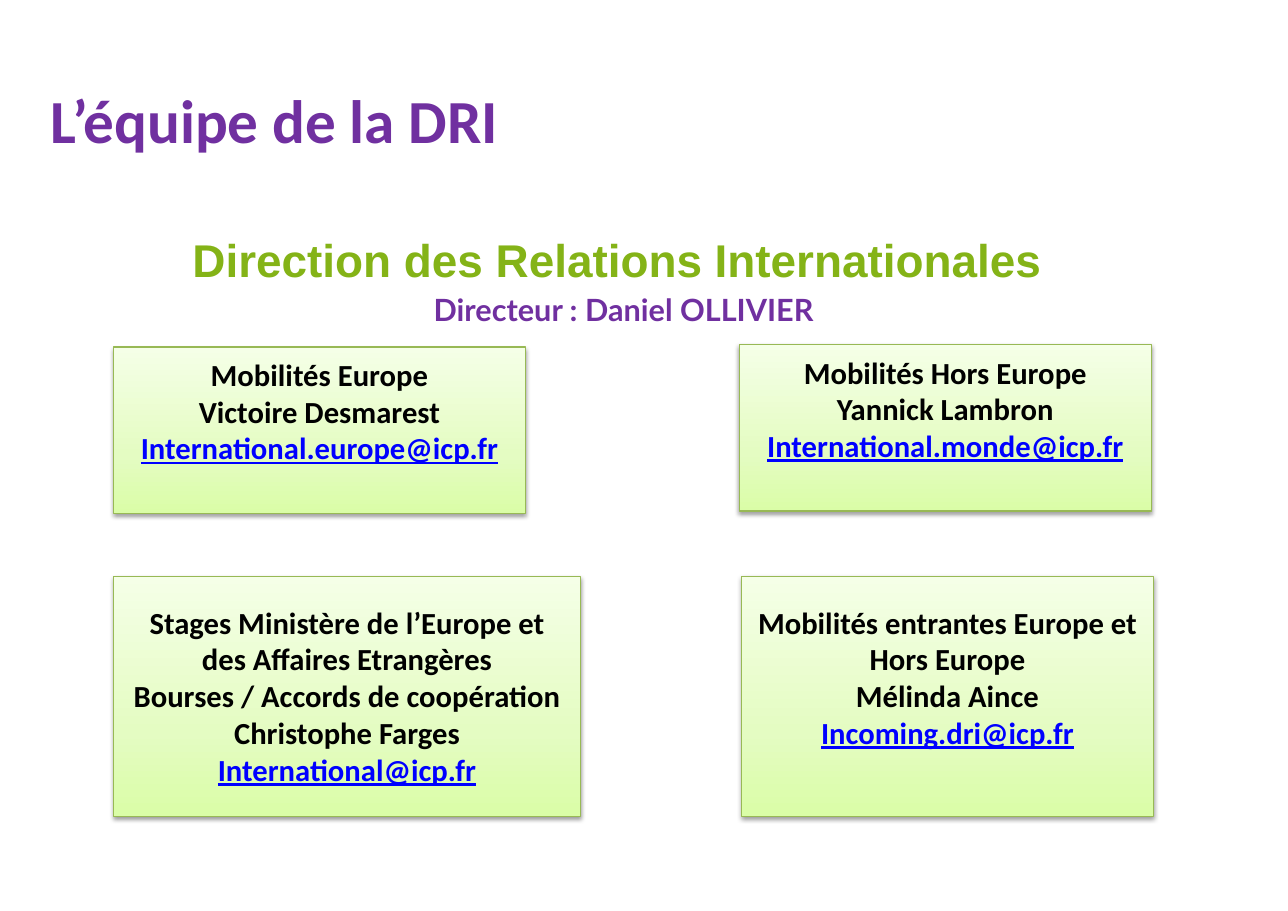
from dataclasses import dataclass

from lxml import etree
from pptx import Presentation
from pptx.dml.color import RGBColor
from pptx.enum.shapes import MSO_SHAPE
from pptx.enum.text import MSO_ANCHOR, MSO_AUTO_SIZE, PP_ALIGN
from pptx.oxml.ns import qn
from pptx.util import Inches, Pt

RECT = MSO_SHAPE.RECTANGLE
TOP, MIDDLE = MSO_ANCHOR.TOP, MSO_ANCHOR.MIDDLE
NO_FIT = MSO_AUTO_SIZE.NONE
LEFT, CENTER = PP_ALIGN.LEFT, PP_ALIGN.CENTER


@dataclass(frozen=True)
class Theme:
    purple: str = "7030A0"
    green: str = "84B317"
    black: str = "000000"
    link: str = "0000FF"
    border: str = "98B955"
    gradient: tuple = ((0, "DAFDA7"), (35, "E4FCC2"), (100, "F5FFE7"))
    font: str = "Calibri"
    heading_font: str = "Arial"
    director_font: str = "Lato"
    title_size: int = 40
    heading_size: int = 30
    text_size: int = 20


@dataclass(frozen=True)
class TeamBox:
    left: float
    top: float
    width: float
    height: float
    inset: float
    lines: tuple
    email: str


THEME = Theme()
TEAM = (
    TeamBox(1.03, 3.15, 3.74, 1.51, 0.08,
            ("Mobilités Europe", "Victoire Desmarest"),
            "International.europe@icp.fr"),
    TeamBox(6.71, 3.13, 3.74, 1.51, 0.08,
            ("Mobilités Hors Europe", "Yannick Lambron"),
            "International.monde@icp.fr"),
    TeamBox(1.03, 5.23, 4.24, 2.18, 0.25,
            ("Stages Ministère de l’Europe et des Affaires Etrangères",
             "Bourses / Accords de coopération", "Christophe Farges"),
            "International@icp.fr"),
    TeamBox(6.73, 5.23, 3.74, 2.18, 0.25,
            ("Mobilités entrantes Europe et Hors Europe", "Mélinda Aince"),
            "Incoming.dri@icp.fr"),
)


def place(sp, left: float, top: float, width: float, height: float) -> None:
    sp.left, sp.top = Inches(left), Inches(top)
    sp.width, sp.height = Inches(width), Inches(height)


def add_run(p, text: str, size: int, color: str, font: str = THEME.font,
            underline: bool = False) -> None:
    r = p.add_run()
    r.text = text
    r.font.name, r.font.size, r.font.bold = font, Pt(size), True
    r.font.color.rgb = RGBColor.from_string(color)
    if underline:
        r.font.underline = True


def add_color(parent, color: str):
    return etree.SubElement(parent, qn("a:srgbClr"), val=color)


def set_gradient(sp) -> None:
    """Fill from the bottom edge to the top edge."""
    grad = etree.Element(qn("a:gradFill"), rotWithShape="1")
    stops = etree.SubElement(grad, qn("a:gsLst"))
    for percent, color in THEME.gradient:
        add_color(etree.SubElement(stops, qn("a:gs"), pos=str(percent * 1000)), color)
    etree.SubElement(grad, qn("a:lin"), ang=str(270 * 60000), scaled="0")
    sp._element.spPr.find(qn("a:prstGeom")).addnext(grad)


def set_shadow(sp) -> None:
    sp.shadow.inherit = False
    effects = sp._element.spPr.find(qn("a:effectLst"))
    shadow = etree.SubElement(effects, qn("a:outerShdw"), blurRad=str(Pt(3.1)),
                              dist=str(Pt(1.6)), dir=str(90 * 60000), rotWithShape="0")
    etree.SubElement(add_color(shadow, THEME.black), qn("a:alpha"), val="38000")


def add_team_box(slide, box: TeamBox) -> None:
    sp = slide.shapes.add_shape(RECT, Inches(box.left), Inches(box.top),
                                Inches(box.width), Inches(box.height))
    set_gradient(sp)
    sp.line.color.rgb = RGBColor.from_string(THEME.border)
    sp.line.width = Pt(0.75)
    set_shadow(sp)
    tf = sp.text_frame
    tf.word_wrap, tf.vertical_anchor = True, TOP
    tf.margin_top = Inches(box.inset)
    p = tf.paragraphs[0]
    for line in box.lines:
        p.alignment = CENTER
        add_run(p, line, THEME.text_size, THEME.black)
        p = tf.add_paragraph()
    p.alignment = CENTER
    add_run(p, box.email, THEME.text_size, THEME.link, underline=True)


def add_title(slide) -> None:
    sp = slide.shapes.title
    place(sp, 0.36, 0.7, 7.41, 0.77)
    tf = sp.text_frame
    tf.auto_size, tf.vertical_anchor = NO_FIT, MIDDLE
    p = tf.paragraphs[0]
    p.alignment = LEFT
    add_run(p, "L’équipe de la DRI", THEME.title_size, THEME.purple)


def add_direction(slide) -> None:
    sp = slide.placeholders[1]
    place(sp, 0.36, 2.01, 10.6, 5.97)
    tf = sp.text_frame
    tf.auto_size, tf.vertical_anchor = NO_FIT, TOP
    tf.margin_left = tf.margin_right = Inches(0.11)
    tf.margin_top = Inches(0.09)
    heading, director = tf.paragraphs[0], tf.add_paragraph()
    for p, space in ((heading, 0), (director, 3)):
        pPr = p._p.get_or_add_pPr()
        pPr.set("marL", "0")
        pPr.set("indent", "0")
        etree.SubElement(pPr, qn("a:buNone"))
        p.alignment, p.space_before = CENTER, Pt(space)
    add_run(heading, "Direction des Relations Internationales ",
            THEME.heading_size, THEME.green, THEME.heading_font)
    add_run(director, "Directeur : Daniel OLLIVIER",
            THEME.text_size, THEME.purple, THEME.director_font)


def main() -> None:
    prs = Presentation()
    prs.slide_width, prs.slide_height = Inches(11.69), Inches(8.27)
    slide = prs.slides.add_slide(prs.slide_layouts[1])
    # Title and heading
    add_title(slide)
    add_direction(slide)
    # Team boxes
    for box in TEAM:
        add_team_box(slide, box)
    prs.save("out.pptx")


if __name__ == "__main__":
    main()
